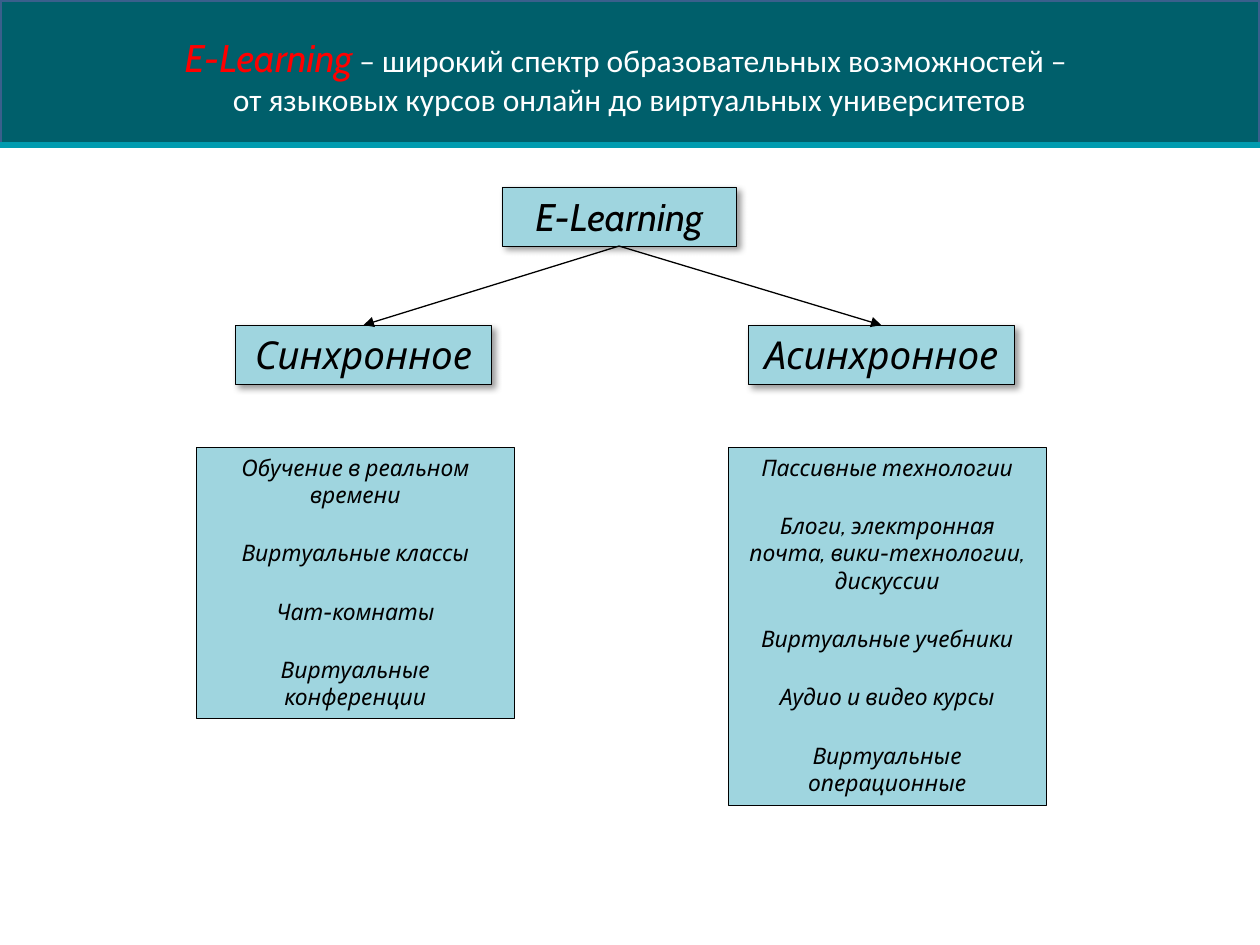
import pptx
import pptx.util
import pptx.dml.color
import pptx.enum.shapes
import pptx.enum.text
import pptx.oxml
import pptx.oxml.ns
from lxml import etree

Pt = pptx.util.Pt
SLIDE_WIDTH, SLIDE_HEIGHT = 720, 540
HEADER_HEIGHT = 82.8
BOX_HEIGHT = 33.8
BRANCH_TOP = 185.8
LIST_TOP, LIST_WIDTH = 255.6, 181.4
COLORS = {
    "header": "005F6B",
    "header_edge": "3A5F8C",
    "rule": "009BAF",
    "box": "9FD5DF",
    "ink": "000000",
    "accent": "FF0000",
    "title": "FFFFFF",
}
BRANCHES = [
    {
        "name": "Синхронное", "left": 134.6, "width": 146.2,
        "list_left": 112.3, "list_height": 154.8,
        "items": ["Обучение в реальном времени", "Виртуальные классы",
                  "Чат-комнаты", "Виртуальные конференции"],
    },
    {
        "name": "Асинхронное", "left": 427.7, "width": 151.9,
        "list_left": 416.2, "list_height": 204.5,
        "items": ["Пассивные технологии",
                  "Блоги, электронная почта, вики-технологии, дискуссии",
                  "Виртуальные учебники", "Аудио и видео курсы",
                  "Виртуальные операционные"],
    },
]


def rgb(name):
    return pptx.dml.color.RGBColor.from_string(COLORS[name])


def add_run(paragraph, text, size, color="ink", font="Cabin", italic=True):
    run = paragraph.add_run()
    run.text = text
    run.font.name = font
    run.font.size = Pt(size)
    run.font.italic = italic
    run.font.color.rgb = rgb(color)


def fit_frame(frame):
    """Wrap the text, start it at the top and let the shape grow with it."""
    frame.word_wrap = True
    frame.auto_size = pptx.enum.text.MSO_AUTO_SIZE.SHAPE_TO_FIT_TEXT
    frame.vertical_anchor = pptx.enum.text.MSO_ANCHOR.TOP


def add_rectangle(slide, left, top, width, height, fill, edge, edge_width):
    rectangle = slide.shapes.add_shape(
        pptx.enum.shapes.MSO_SHAPE.RECTANGLE,
        Pt(left), Pt(top), Pt(width), Pt(height))
    rectangle.shadow.inherit = False
    rectangle.fill.solid()
    rectangle.fill.fore_color.rgb = rgb(fill)
    rectangle.line.color.rgb = rgb(edge)
    rectangle.line.width = Pt(edge_width)
    return rectangle


def add_line(slide, start, end, color, width):
    line = slide.shapes.add_connector(
        pptx.enum.shapes.MSO_CONNECTOR.STRAIGHT,
        Pt(start[0]), Pt(start[1]), Pt(end[0]), Pt(end[1]))
    line.line.color.rgb = rgb(color)
    line.line.width = Pt(width)
    etree.SubElement(line.element.spPr, pptx.oxml.ns.qn("a:effectLst"))
    return line


def add_arrow(slide, parent, child):
    """Join the bottom of the parent box to the top of the child box."""
    arrow = add_line(slide, (0, 0), (0, 0), "ink", 0.75)
    arrow.begin_connect(parent, 2)
    arrow.end_connect(child, 0)
    outline = arrow.line._get_or_add_ln()
    etree.SubElement(outline, pptx.oxml.ns.qn("a:tailEnd"), type="triangle")


def add_shadow(box):
    effects = box.element.spPr.find(pptx.oxml.ns.qn("a:effectLst"))
    effects.append(pptx.oxml.parse_xml(
        f'<a:outerShdw {pptx.oxml.ns.nsdecls("a")} blurRad="{Pt(4)}" '
        f'dist="{Pt(3)}" dir="2700000" algn="tl" rotWithShape="0">'
        f'<a:srgbClr val="{COLORS["ink"]}"><a:alpha val="40000"/></a:srgbClr>'
        '</a:outerShdw>'))


def add_text_box(slide, left, top, width, height, items, size):
    box = add_rectangle(slide, left, top, width, height, "box", "ink", 0.25)
    frame = box.text_frame
    fit_frame(frame)
    for index, item in enumerate(items):
        paragraph = frame.add_paragraph() if index else frame.paragraphs[0]
        paragraph.alignment = pptx.enum.text.PP_ALIGN.CENTER
        paragraph.space_before = Pt(17.7 if index else 0)
        add_run(paragraph, item, size)
    return box


def add_heading(slide, left, top, width, name):
    heading = add_text_box(slide, left, top, width, BOX_HEIGHT, [name], 22)
    add_shadow(heading)
    return heading


def add_header(slide):
    add_rectangle(slide, 0, 0, SLIDE_WIDTH, HEADER_HEIGHT,
                  "header", "header_edge", 2)
    add_line(slide, (0, HEADER_HEIGHT), (SLIDE_WIDTH, HEADER_HEIGHT), "rule", 3)

    title = slide.shapes.title
    slide.shapes.element.append(title.element)  # in front of the band
    title.left, title.top = Pt(25.2), Pt(15.8)
    title.width, title.height = Pt(669), Pt(55.4)
    fit_frame(title.text_frame)
    first = title.text_frame.paragraphs[0]
    second = title.text_frame.add_paragraph()
    for paragraph in (first, second):
        paragraph.alignment = pptx.enum.text.PP_ALIGN.CENTER
        paragraph.space_before = Pt(0)
    add_run(first, "E-Learning", 22, "accent")
    for paragraph, text in (
            (first, " – широкий спектр образовательных возможностей – "),
            (second, "от языковых курсов онлайн до виртуальных университетов")):
        add_run(paragraph, text, 18, "title", "Calibri", italic=False)


def main():
    presentation = pptx.Presentation()
    presentation.slide_width = Pt(SLIDE_WIDTH)
    presentation.slide_height = Pt(SLIDE_HEIGHT)
    slide = presentation.slides.add_slide(presentation.slide_layouts[5])

    add_header(slide)
    root = add_heading(slide, 286.8, 106.8, 133.9, "E-Learning")
    for branch in BRANCHES:
        heading = add_heading(slide, branch["left"], BRANCH_TOP,
                              branch["width"], branch["name"])
        add_arrow(slide, root, heading)
        add_text_box(slide, branch["list_left"], LIST_TOP, LIST_WIDTH,
                     branch["list_height"], branch["items"], 13)
    presentation.save("out.pptx")


if __name__ == "__main__":
    main()
